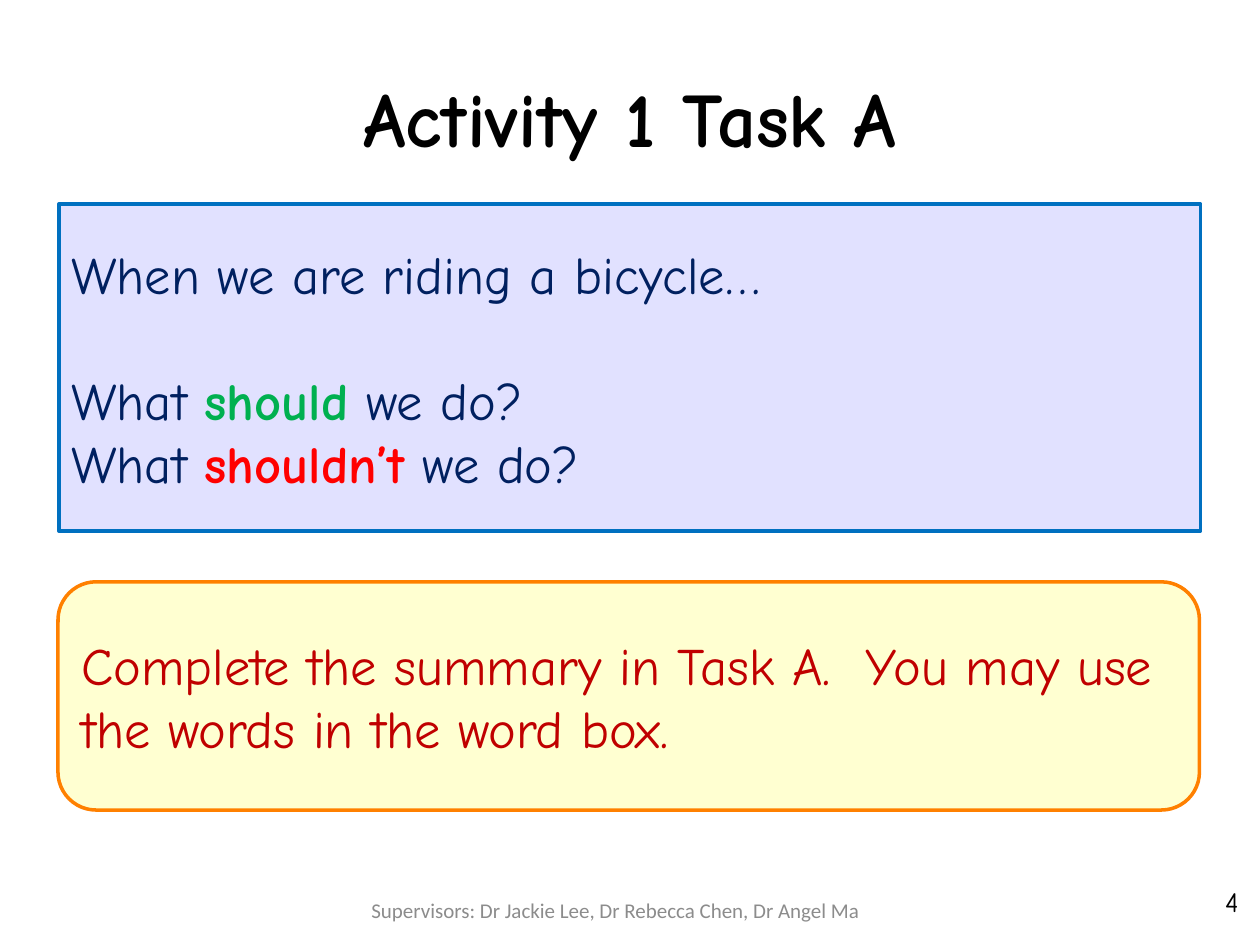
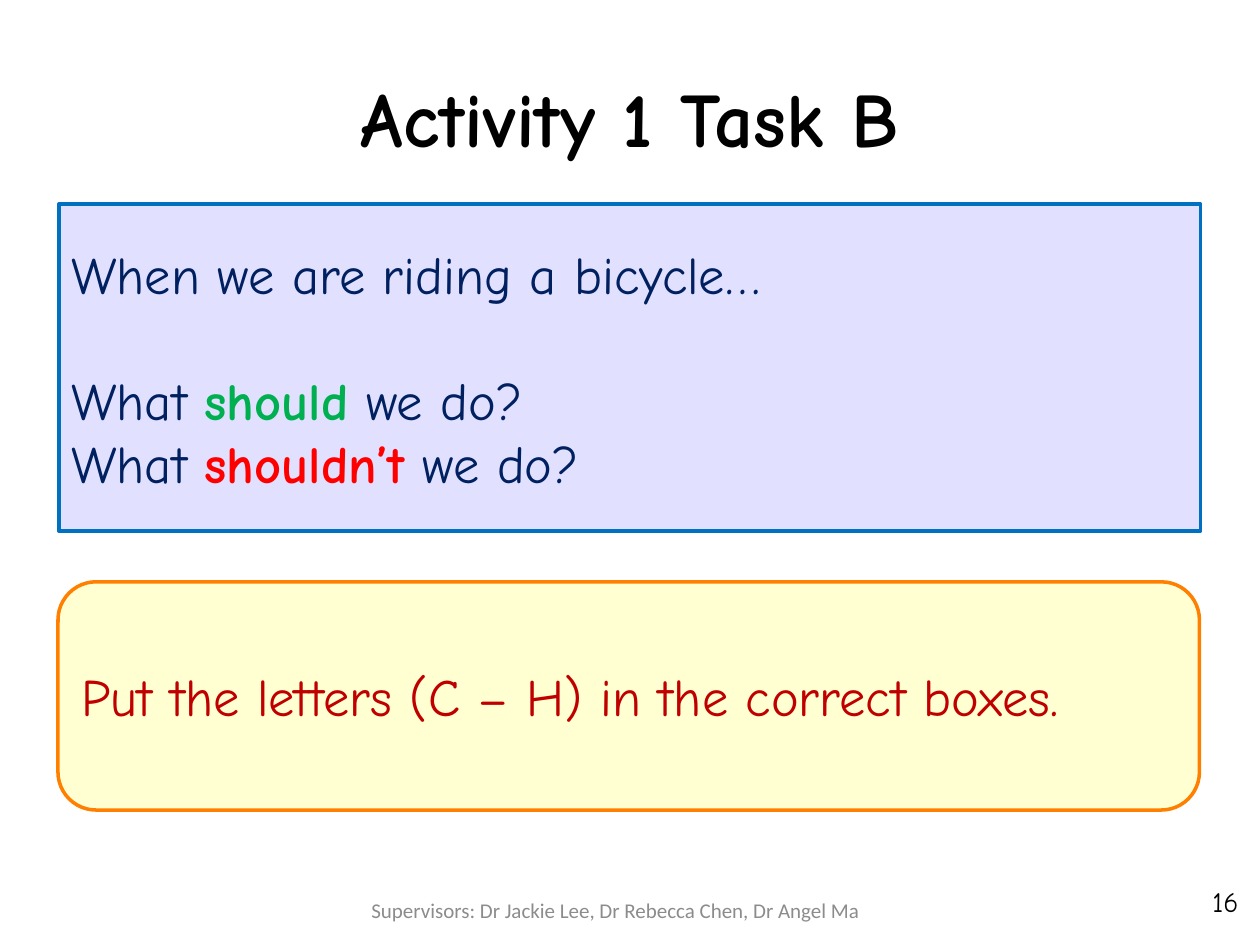
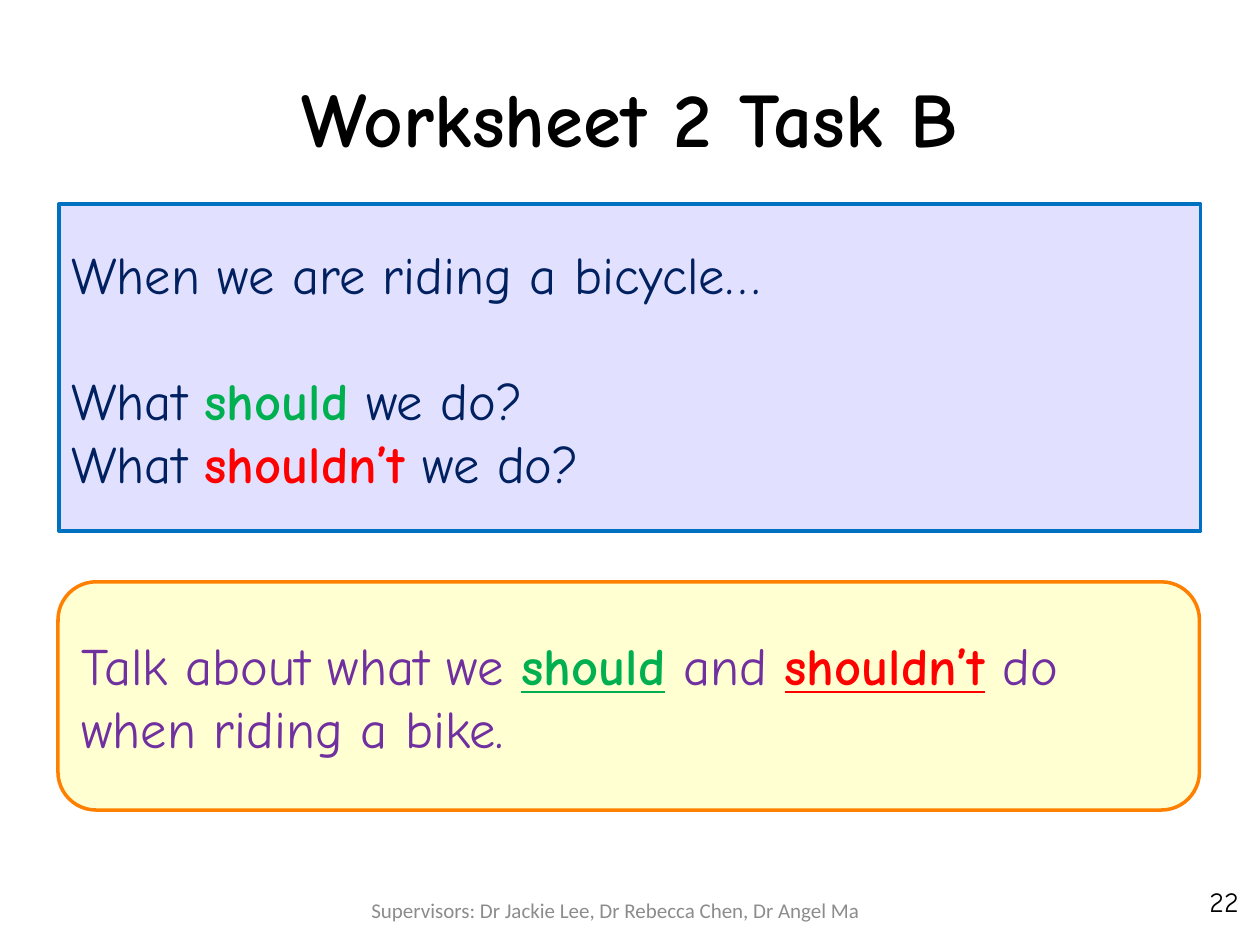
from pptx import Presentation
from pptx.dml.color import RGBColor
from pptx.enum import shapes, text
from pptx.util import Cm, Pt

HAND = "Comic Neue"
NAVY, RED, PURPLE = "002060", "C00000", "7030A0"
MID, LEFT, RIGHT = text.PP_ALIGN.CENTER, text.PP_ALIGN.LEFT, text.PP_ALIGN.RIGHT

# Formats: name, size, bold and underline go straight onto the font
TITLE = {"name": HAND, "size": Pt(44), "bold": True, "color": "000000"}
NUMBER = {"name": HAND, "size": Pt(16), "color": "000000"}
FOOTER = {"name": "Calibri", "size": Pt(12), "color": "8C8C8C"}
BODY = {"name": HAND, "size": Pt(30)}
KEYS = {
    "should": {"bold": True, "color": "00B050"},
    "shouldn’t": {"bold": True, "color": "FF0000"},
}

QUESTION = [
    ["When we are riding a bicycle…"],
    ["What ", "should", " we do?"],
    ["What ", "shouldn’t", " we do?"],
]
CREDIT = "Supervisors: Dr Jackie Lee, Dr Rebecca Chen, Dr Angel Ma"

SLIDES = [
    ("Activity 1 Task A", 4, RED,
     ["Complete the summary in Task A.  You may use the words in the word box."]),
    ("Activity 1 Task B", 16, RED,
     ["Put the letters (C – H) in the correct boxes."]),
    ("Worksheet 2 Task B", 22, PURPLE,
     ["Talk about what we ", "should", " and ", "shouldn’t", " do when riding a bike."]),
]


def tint(code):
    return RGBColor.from_string(code)


def style(font, form):
    for key, value in form.items():
        if key == "color":
            font.color.rgb = tint(value)
        else:
            setattr(font, key, value)


def write(shape, lines, form, align, mark=None):
    """Fill a shape with lines of pieces; key words also get the mark format."""
    frame = shape.text_frame
    frame.word_wrap = True
    frame.vertical_anchor = text.MSO_ANCHOR.MIDDLE
    for i, line in enumerate(lines):
        para = frame.paragraphs[0] if i == 0 else frame.add_paragraph()
        para.alignment = align
        for piece in line:
            run = para.add_run()
            run.text = piece
            extra = {**KEYS[piece], **(mark or {})} if piece in KEYS else {}
            style(run.font, {**form, **extra})
    return frame


def label(slide, box, words, form, align):
    shape = slide.shapes.add_textbox(*map(Cm, box))
    write(shape, [[words]], form, align)


def panel(slide, kind, box, fill, edge):
    shape = slide.shapes.add_shape(kind, *map(Cm, box))
    shape.shadow.inherit = False
    shape.fill.solid()
    shape.fill.fore_color.rgb = tint(fill)
    shape.line.color.rgb = tint(edge)
    shape.line.width = Pt(2)
    return shape


def question(slide):
    shape = panel(slide, shapes.MSO_SHAPE.RECTANGLE,
                  (1.19, 4.11, 23.01, 6.6), "E1E1FF", "0070C0")
    frame = write(shape, QUESTION, {**BODY, "color": NAVY}, LEFT)
    frame.paragraphs[0].space_after = Pt(36)


def task(slide, pieces, color):
    shape = panel(slide, shapes.MSO_SHAPE.ROUNDED_RECTANGLE,
                  (1.17, 11.73, 23.01, 4.6), "FFFFD1", "FF8000")
    write(shape, [pieces], {**BODY, "color": color}, LEFT, {"underline": True})


def main():
    deck = Presentation()
    deck.slide_width, deck.slide_height = Cm(25.4), Cm(19.05)
    for title, number, color, pieces in SLIDES:
        slide = deck.slides.add_slide(deck.slide_layouts[6])
        label(slide, (1.27, 0.76, 22.86, 3.18), title, TITLE, MID)
        label(slide, (19.3, 17.65, 5.92, 1.02), str(number), NUMBER, RIGHT)
        question(slide)
        task(slide, pieces, color)
        label(slide, (6.91, 17.65, 11, 1.4), CREDIT, FOOTER, MID)
    deck.save("out.pptx")


if __name__ == "__main__":
    main()
